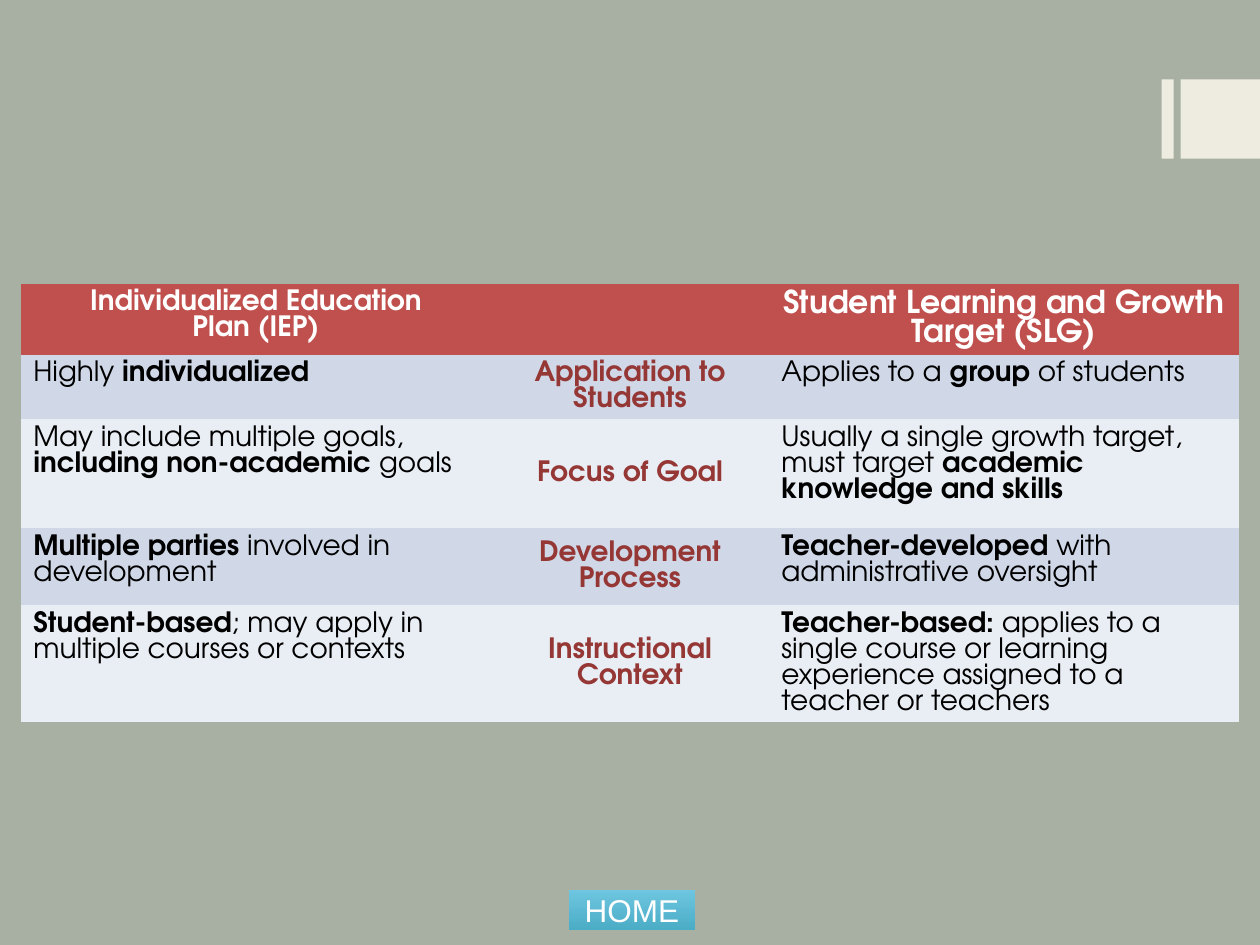
from dataclasses import dataclass

from pptx import Presentation
from pptx.dml.color import RGBColor
from pptx.enum.shapes import MSO_SHAPE
from pptx.enum.text import MSO_ANCHOR, PP_ALIGN
from pptx.util import Cm, Pt

CENTER, LEFT = PP_ALIGN.CENTER, PP_ALIGN.LEFT
TOP, MIDDLE = MSO_ANCHOR.TOP, MSO_ANCHOR.MIDDLE
RECTANGLE, BUTTON = MSO_SHAPE.RECTANGLE, MSO_SHAPE.ACTION_BUTTON_CUSTOM

TABLE_FONT = "TeX Gyre Adventor"
WHITE, BLACK, CREAM = "FFFFFF", "000000", "EEECE1"
HEADER_RED, TOPIC_RED = "C0504D", "953735"
BANDS = ("D0D8E8", "E9EDF4")


@dataclass
class Run:
    text: str
    bold: bool = False


@dataclass
class Style:
    size: int = 16
    color: str = BLACK
    font: str = TABLE_FONT
    align: PP_ALIGN = LEFT
    anchor: MSO_ANCHOR = TOP


@dataclass
class Comparison:
    iep: list[Run]
    topic: str
    slg: list[Run]


HEADER = Style(color=WHITE, align=CENTER)
LARGE_HEADER = Style(size=18, color=WHITE, align=CENTER)
TOPIC = Style(color=TOPIC_RED, align=CENTER, anchor=MIDDLE)
BODY = Style()
BUTTON_LABEL = Style(size=18, color=WHITE, font="Arial", align=CENTER, anchor=MIDDLE)

COMPARISONS = [
    Comparison([Run("Highly "), Run("individualized", True)],
               "Application to Students",
               [Run("Applies to a "), Run("group ", True), Run("of students")]),
    Comparison([Run("May include multiple goals, "),
                Run("including non-academic ", True), Run("goals")],
               "Focus of Goal",
               [Run("Usually a single growth target, must target "),
                Run("academic knowledge and skills", True)]),
    Comparison([Run("Multiple parties ", True), Run("involved in development")],
               "Development Process",
               [Run("Teacher-developed ", True), Run("with administrative oversight")]),
    Comparison([Run("Student-based", True),
                Run("; may apply in multiple courses or contexts")],
               "Instructional Context",
               [Run("Teacher-based: ", True),
                Run("applies to a single course or learning experience "
                    "assigned to a teacher or teachers")]),
]
COLUMN_WIDTHS = (9.48, 5.6, 9.48)
ROW_HEIGHTS = (1.43, 1.29, 2.2, 1.55, 2.36)


def rgb(color: str) -> RGBColor:
    return RGBColor.from_string(color)


def write_paragraphs(text_frame, paragraphs: list[list[Run]], style: Style) -> None:
    for index, runs in enumerate(paragraphs):
        paragraph = text_frame.add_paragraph() if index else text_frame.paragraphs[0]
        paragraph.alignment = style.align
        for item in runs:
            run = paragraph.add_run()
            run.text = item.text
            run.font.name = style.font
            run.font.size = Pt(style.size)
            run.font.bold = item.bold
            run.font.color.rgb = rgb(style.color)


def fill_cell(cell, paragraphs: list[list[Run]], style: Style, fill: str) -> None:
    cell.fill.solid()
    cell.fill.fore_color.rgb = rgb(fill)
    cell.vertical_anchor = style.anchor
    write_paragraphs(cell.text_frame, paragraphs, style)


def add_plain_shape(slide, kind: MSO_SHAPE, left: float, top: float,
                    width: float, height: float):
    shape = slide.shapes.add_shape(kind, Cm(left), Cm(top), Cm(width), Cm(height))
    shape.shadow.inherit = False
    shape.line.fill.background()
    return shape


def add_corner_bars(slide) -> None:
    for left, width in ((23.42, 0.24), (23.8, 1.6)):
        bar = add_plain_shape(slide, RECTANGLE, left, 1.6, width, 1.6)
        bar.fill.solid()
        bar.fill.fore_color.rgb = rgb(CREAM)


def add_home_button(slide) -> None:
    button = add_plain_shape(slide, BUTTON, 11.47, 17.94, 2.54, 0.81)
    button.fill.gradient()
    button.fill.gradient_angle = 270
    for stop, color in zip(button.fill.gradient_stops, ("6EC6E0", "4BACC6")):
        stop.color.rgb = rgb(color)
    for stop, position in zip(button.fill.gradient_stops, (0, 1)):
        stop.position = position
    text_frame = button.text_frame
    text_frame.vertical_anchor = BUTTON_LABEL.anchor
    text_frame.margin_top = text_frame.margin_bottom = 0
    write_paragraphs(text_frame, [[Run("HOME")]], BUTTON_LABEL)


def add_comparison_table(slide) -> None:
    table = slide.shapes.add_table(
        len(ROW_HEIGHTS), len(COLUMN_WIDTHS), Cm(0.42), Cm(5.72),
        Cm(sum(COLUMN_WIDTHS)), Cm(sum(ROW_HEIGHTS))).table
    for column, width in zip(table.columns, COLUMN_WIDTHS):
        column.width = Cm(width)
    for row, height in zip(table.rows, ROW_HEIGHTS):
        row.height = Cm(height)
    # A style without borders leaves only the cell fills
    table.horz_banding = table.first_row = False
    style_id = table._tbl.tblPr.find("{*}tableStyleId")
    style_id.text = "{2D5ABB26-0587-4C30-8999-92F81FD0307C}"

    # Header row
    fill_cell(table.cell(0, 0), [[Run("Individualized Education", True)],
                                 [Run("Plan (IEP)", True)]], HEADER, HEADER_RED)
    fill_cell(table.cell(0, 1), [], HEADER, HEADER_RED)
    fill_cell(table.cell(0, 2), [[Run("Student Learning and Growth Target (SLG)", True)]],
              LARGE_HEADER, HEADER_RED)

    # Banded comparison rows
    for number, comparison in enumerate(COMPARISONS, start=1):
        band = BANDS[(number - 1) % len(BANDS)]
        fill_cell(table.cell(number, 0), [comparison.iep], BODY, band)
        fill_cell(table.cell(number, 1), [[Run(comparison.topic, True)]], TOPIC, band)
        fill_cell(table.cell(number, 2), [comparison.slg], BODY, band)


def main() -> None:
    presentation = Presentation()
    presentation.slide_width, presentation.slide_height = Cm(25.4), Cm(19.05)
    slide = presentation.slides.add_slide(presentation.slide_layouts[6])
    slide.background.fill.solid()
    slide.background.fill.fore_color.rgb = rgb("A8B0A4")
    add_corner_bars(slide)
    add_home_button(slide)
    add_comparison_table(slide)
    presentation.save("out.pptx")


if __name__ == "__main__":
    main()
